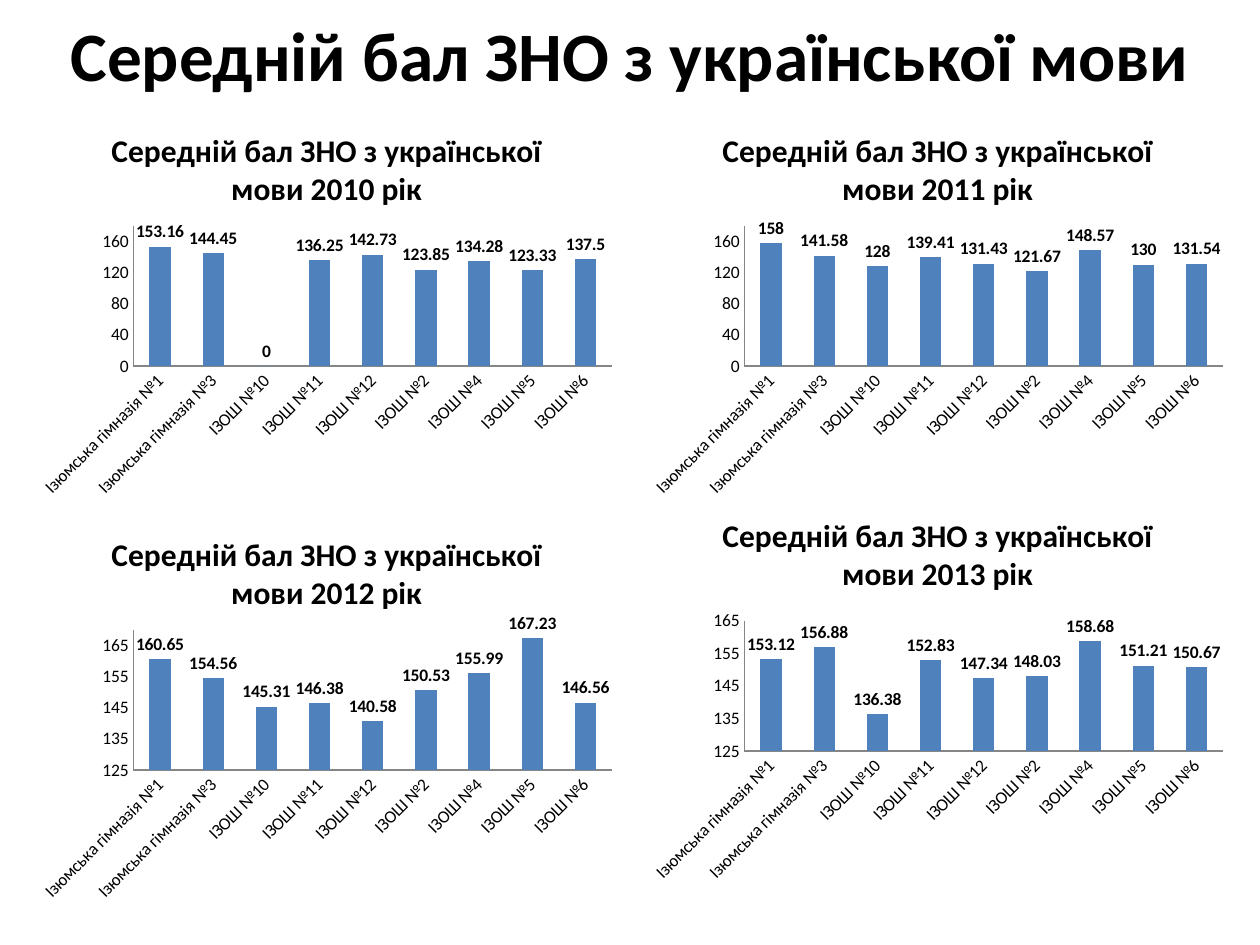
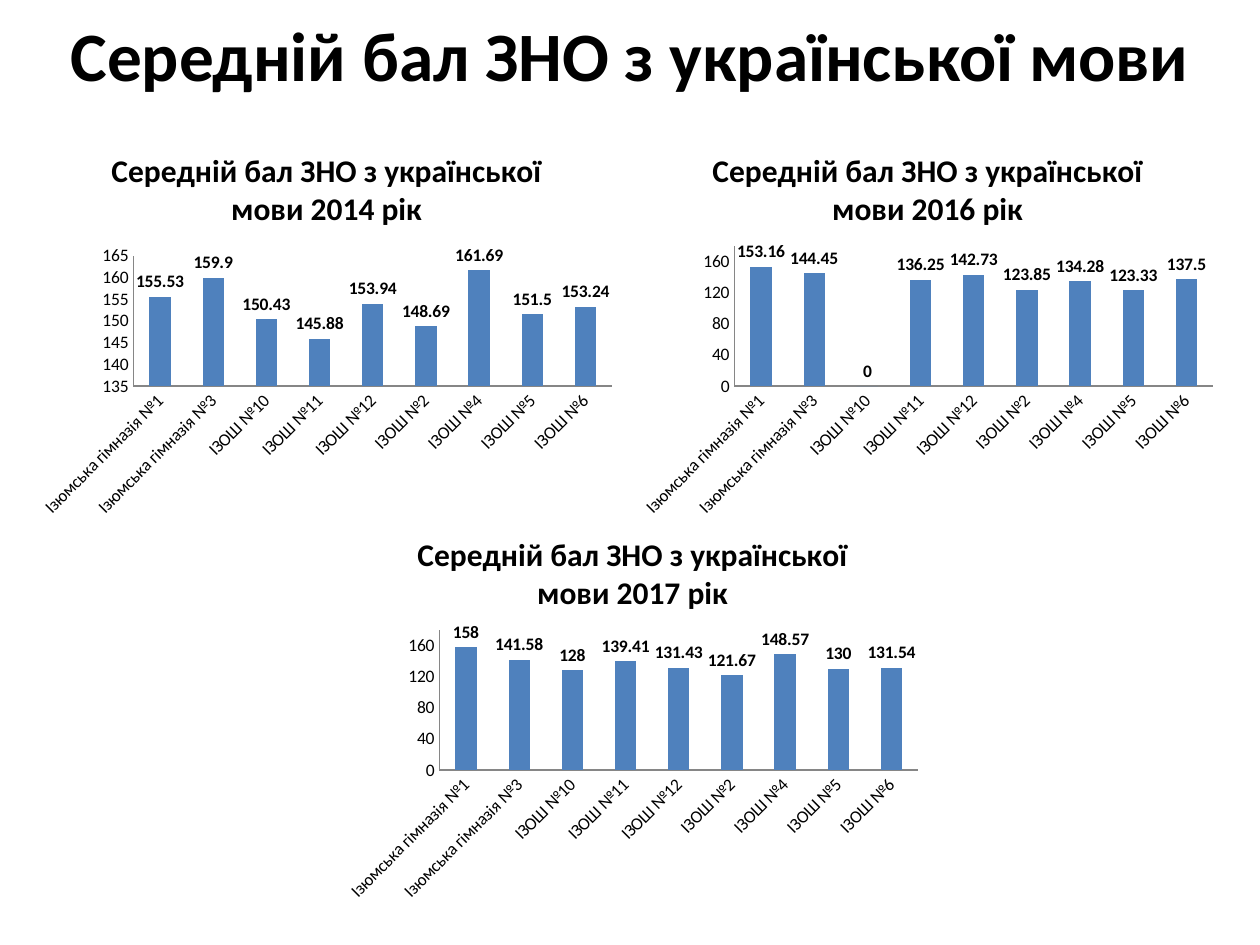
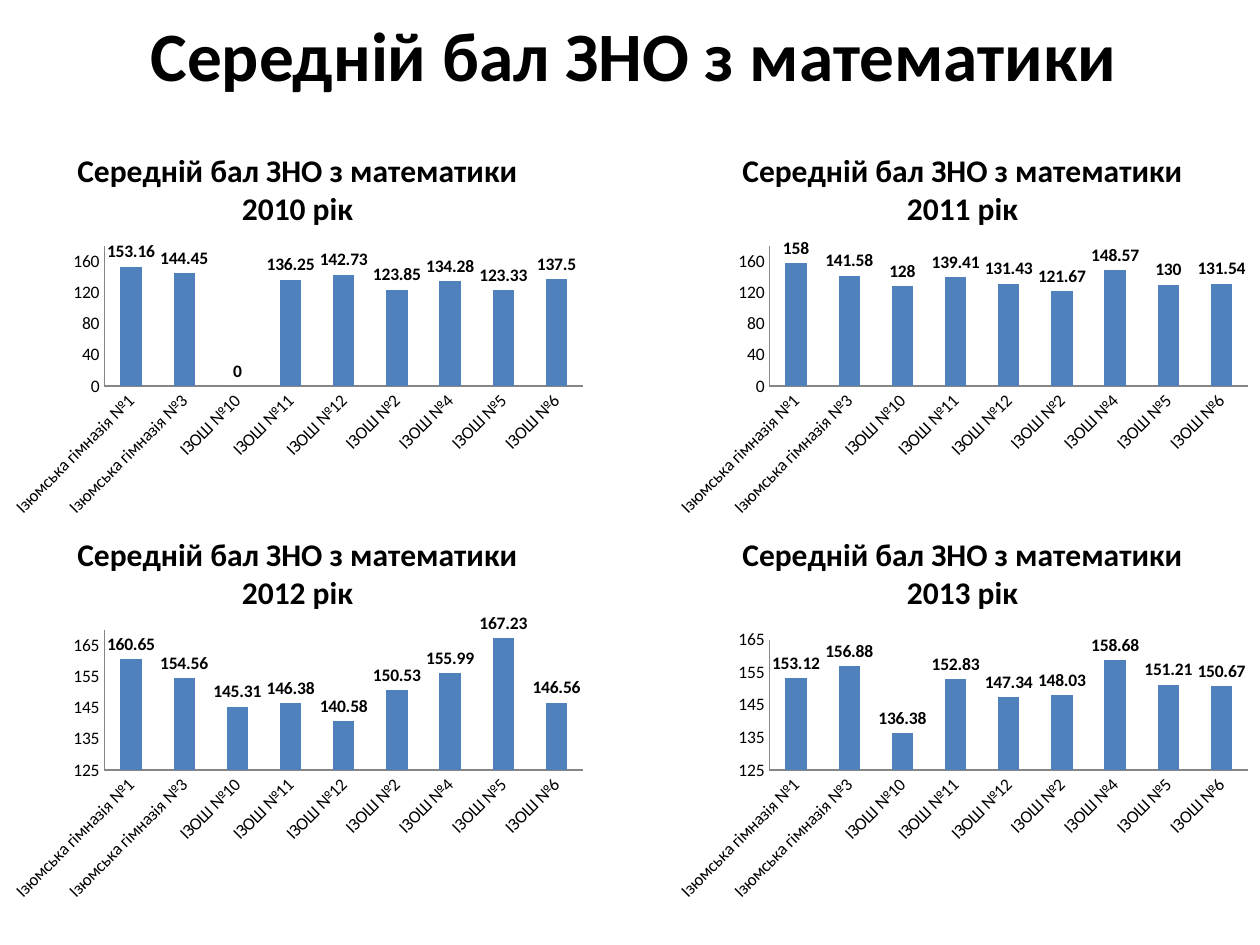
import pptx
import pptx.chart.data
import pptx.dml.color
import pptx.enum.chart
import pptx.enum.text
import pptx.util

SCALE = 914400 / 126  # EMU in one px
FONT = "Calibri"
COLORS = {"text": "000000", "bar": "4F81BD", "axis": "868686", "back": "FFFFFF"}
CHART_W, CHART_H = 595, 397

SCHOOLS = ["Ізюмська гімназія №1", "Ізюмська гімназія №3"] + [
    f"ІЗОШ №{n}" for n in (10, 11, 12, 2, 4, 5, 6)]

# Each set of scores with the low end, high end and step of its axis
SET_A = ([153.16, 144.45, 0, 136.25, 142.73, 123.85, 134.28, 123.33, 137.5],
         (0, 180, 40))
SET_B = ([158, 141.58, 128, 139.41, 131.43, 121.67, 148.57, 130, 131.54],
         (0, 180, 40))
SET_C = ([160.65, 154.56, 145.31, 146.38, 140.58, 150.53, 155.99, 167.23, 146.56],
         (125, 170, 10))
SET_D = ([153.12, 156.88, 136.38, 152.83, 147.34, 148.03, 158.68, 151.21, 150.67],
         (125, 165, 10))
SET_E = ([155.53, 159.9, 150.43, 145.88, 153.94, 148.69, 161.69, 151.5, 153.24],
         (135, 165, 5))

UKR = "Середній бал ЗНО з української мови"
MATH = "Середній бал ЗНО з математики"

# Title, title left and width, then charts: year, left, top, scores
SLIDES = [
    (UKR, 0, 1260, [(2010, 29, 108, SET_A), (2011, 640, 108, SET_B),
                    (2012, 29, 512, SET_C), (2013, 640, 493, SET_D)]),
    (UKR, 0, 1260, [(2014, 29, 128, SET_E), (2016, 630, 128, SET_A),
                    (2017, 335, 512, SET_B)]),
    (MATH, 98, 1071, [(2010, 0, 128, SET_A), (2011, 665, 128, SET_B),
                      (2012, 0, 512, SET_C), (2013, 665, 512, SET_D)]),
]


def px(n):
    return pptx.util.Emu(round(n * SCALE))


def color(name):
    return pptx.dml.color.RGBColor.from_string(COLORS[name])


def style(font, size, bold=False):
    font.name = FONT
    font.size = pptx.util.Pt(size)
    font.bold = bold
    font.color.rgb = color("text")


def add_title(slide, text, left, width):
    title = slide.shapes.title
    title.left, title.top = px(left), px(0)
    title.width, title.height = px(width), px(108)
    frame = title.text_frame
    frame.word_wrap = True
    frame.auto_size = pptx.enum.text.MSO_AUTO_SIZE.NONE
    frame.vertical_anchor = pptx.enum.text.MSO_ANCHOR.MIDDLE
    para = frame.paragraphs[0]
    para.alignment = pptx.enum.text.PP_ALIGN.CENTER
    run = para.add_run()
    run.text = text
    style(run.font, 39.6, True)


def set_axis(axis):
    axis.has_major_gridlines = False
    axis.major_tick_mark = pptx.enum.chart.XL_TICK_MARK.NONE
    axis.minor_tick_mark = pptx.enum.chart.XL_TICK_MARK.NONE
    axis.format.line.color.rgb = color("axis")
    axis.format.line.width = pptx.util.Pt(0.75)
    style(axis.tick_labels.font, 10)


def add_chart(slide, heading, left, top, scores):
    values, (low, high, step) = scores
    data = pptx.chart.data.CategoryChartData()
    data.categories = SCHOOLS
    data.add_series("Series 1", values)
    chart = slide.shapes.add_chart(
        pptx.enum.chart.XL_CHART_TYPE.COLUMN_CLUSTERED,
        px(left), px(top), px(CHART_W), px(CHART_H), data).chart
    style(chart.font, 10)
    chart.has_legend = False

    # Heading
    chart.has_title = True
    run = chart.chart_title.text_frame.paragraphs[0].add_run()
    run.text = heading
    style(run.font, 18, True)
    chart.chart_title.include_in_layout = False

    # Axes, with school names on a slant
    set_axis(chart.category_axis)
    names = chart.category_axis._element.get_or_add_txPr()
    names.bodyPr.set("rot", "-2700000")
    axis = chart.value_axis
    set_axis(axis)
    axis.minimum_scale, axis.maximum_scale = low, high
    axis.major_unit = step

    # Bars and their values
    plot = chart.plots[0]
    plot.gap_width = 150
    plot.vary_by_categories = False
    bars = plot.series[0]
    bars.format.fill.solid()
    bars.format.fill.fore_color.rgb = color("bar")
    labels = bars.data_labels
    labels.show_value = True
    labels.position = pptx.enum.chart.XL_LABEL_POSITION.OUTSIDE_END
    style(labels.font, 10, True)


def main():
    deck = pptx.Presentation()
    deck.slide_width, deck.slide_height = px(1260), px(945)
    for title, left, width, charts in SLIDES:
        slide = deck.slides.add_slide(deck.slide_layouts[5])
        slide.background.fill.solid()
        slide.background.fill.fore_color.rgb = color("back")
        add_title(slide, title, left, width)
        for year, x, y, scores in charts:
            add_chart(slide, f"{title} {year} рік", x, y, scores)
    deck.save("out.pptx")


if __name__ == "__main__":
    main()
